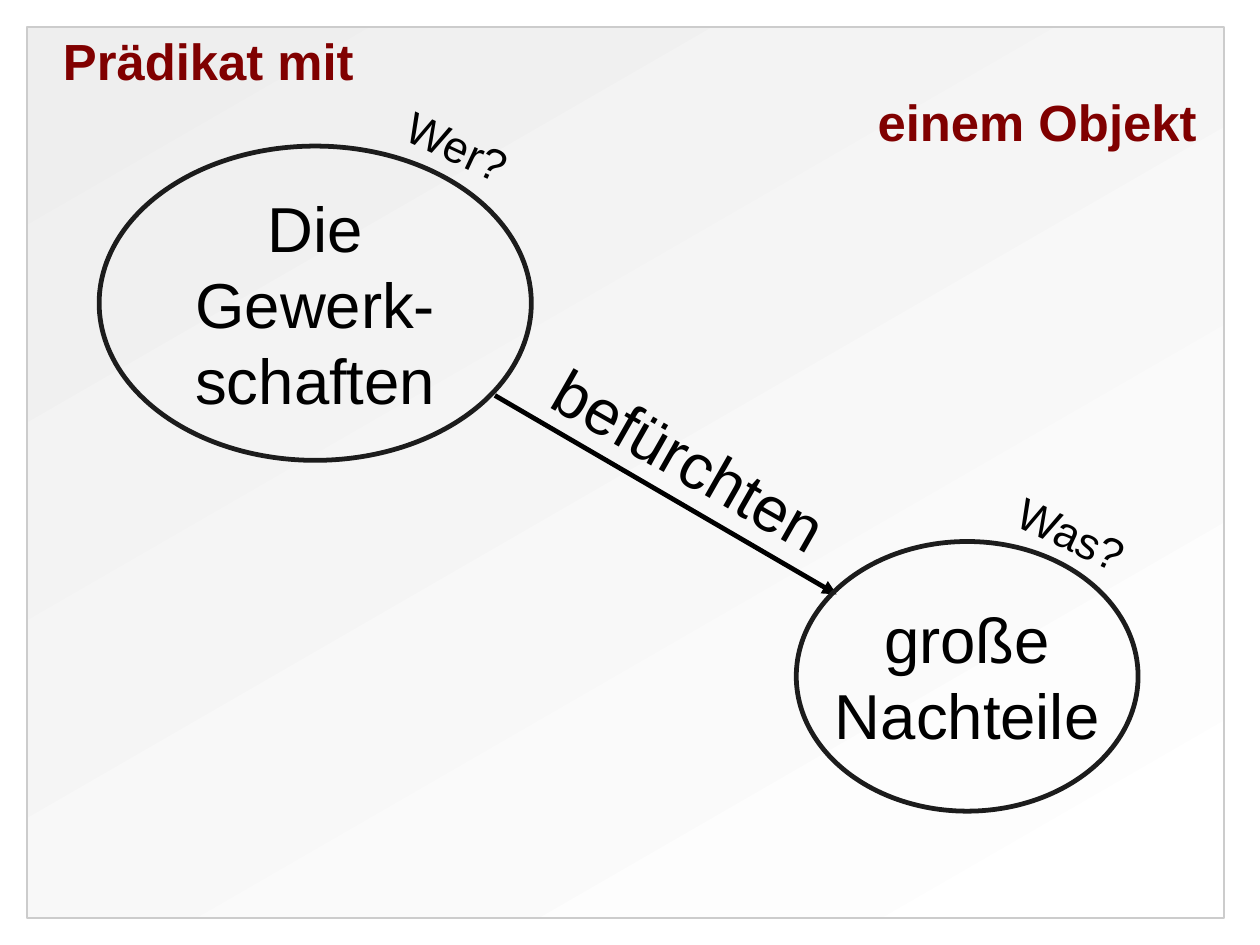
from lxml.etree import SubElement
from pptx import Presentation
from pptx.dml.color import RGBColor
from pptx.enum.shapes import MSO_CONNECTOR, MSO_SHAPE
from pptx.enum.text import MSO_ANCHOR, MSO_AUTO_SIZE, PP_ALIGN
from pptx.oxml.ns import qn
from pptx.util import Cm, Inches, Pt

WIDE, HIGH = Cm(28), Cm(21)
BLACK = RGBColor(0, 0, 0)
RING = RGBColor(0x1C, 0x1C, 0x1C)
EDGE = RGBColor(0xCC, 0xCC, 0xCC)
PALE = RGBColor(0xEE, 0xEE, 0xEE)
WHITE = RGBColor(0xFF, 0xFF, 0xFF)
MAROON = RGBColor(0x80, 0, 0)


def place(x, y, w, h):
    """Turn percent shares of the slide into a left, top, width, height list."""
    return [round(part * side / 100)
            for part, side in zip((x, y, w, h), (WIDE, HIGH) * 2)]


def write(frame, paras, size, color=BLACK, bold=False):
    """Fill a frame with (text, alignment) paragraphs, run by run."""
    for index, (text, align) in enumerate(paras):
        para = frame.paragraphs[0] if index == 0 else frame.add_paragraph()
        para.alignment = align
        para.line_spacing = 1
        para.space_before = Pt(0)
        for row, line in enumerate(text.split("\n")):
            if row:
                para.add_line_break()
            run = para.add_run()
            run.text = line
            font = run.font
            font.name, font.size, font.bold = "Arial", Pt(size), bold
            font.color.rgb = color


def inset(frame, side, top):
    """Set the margins of a frame in inches."""
    frame.margin_left = frame.margin_right = Inches(side)
    frame.margin_top = frame.margin_bottom = Inches(top)


def panel(slide, area):
    """Draw the shaded panel behind the title."""
    shape = slide.shapes.add_shape(MSO_SHAPE.RECTANGLE, *area)
    shape.shadow.inherit = False
    shape.fill.gradient()
    shape.fill.gradient_angle = 300
    for stop, color, at in zip(shape.fill.gradient_stops, (PALE, WHITE), (0, 1)):
        stop.color.rgb = color
        stop.position = at
    shape.line.color.rgb = EDGE
    shape.line.width = Pt(1.5)
    slide.shapes.title.element.addprevious(shape.element)


def head(slide, area, left, right):
    """Set the title with its first line left and its second line right."""
    title = slide.shapes.title
    title.left, title.top, title.width, title.height = area
    frame = title.text_frame
    frame.auto_size = MSO_AUTO_SIZE.NONE
    frame.vertical_anchor = MSO_ANCHOR.MIDDLE
    inset(frame, 0, 0)
    write(frame, [(left, PP_ALIGN.LEFT), (right, PP_ALIGN.RIGHT)], 32, MAROON, True)


def bubble(slide, area, *texts):
    """Draw an open ellipse with centred paragraphs."""
    shape = slide.shapes.add_shape(MSO_SHAPE.OVAL, *area)
    shape.shadow.inherit = False
    shape.fill.background()
    shape.line.color.rgb = RING
    shape.line.width = Pt(3)
    frame = shape.text_frame
    frame.word_wrap = False
    frame.vertical_anchor = MSO_ANCHOR.MIDDLE
    inset(frame, 0.12, 0.07)
    write(frame, [(text, PP_ALIGN.CENTER) for text in texts], 40)


def label(slide, area, text, size, turn, wrap=True):
    """Add a turned text label."""
    box = slide.shapes.add_textbox(*area)
    box.rotation = turn
    frame = box.text_frame
    frame.word_wrap = wrap
    if not wrap:
        frame.auto_size = MSO_AUTO_SIZE.SHAPE_TO_FIT_TEXT
    write(frame, [(text, PP_ALIGN.LEFT)], size)


def arrow(slide, ends):
    """Draw an arrow between two points."""
    link = slide.shapes.add_connector(MSO_CONNECTOR.STRAIGHT, *ends)
    link.line.color.rgb = BLACK
    link.line.width = Pt(3)
    props = link.element.spPr
    SubElement(props.find(qn("a:ln")), qn("a:tailEnd"), type="triangle")
    SubElement(props, qn("a:effectLst"))


def main():
    """Build the slide and save it."""
    deck = Presentation()
    deck.slide_width, deck.slide_height = WIDE, HIGH
    slide = deck.slides.add_slide(deck.slide_layouts[5])
    panel(slide, place(2.14, 2.86, 95, 94.3))
    head(slide, place(5, 3.5, 90, 12.1), "Prädikat mit", "einem Objekt")
    arrow(slide, place(39.28, 41.85, 66.4, 62.9))
    bubble(slide, place(7.87, 15.46, 34.3, 33.25), "Die", "Gewerk-\nschaften")
    label(slide, place(31.2, 12.45, 11.8, 6.77), "Wer?", 28, 25)
    bubble(slide, place(63.2, 57.3, 27.13, 28.54), "große", "Nachteile")
    label(slide, place(79.74, 53.57, 12.52, 6.41), "Was?", 28, 25)
    label(slide, place(42, 44, 25.86, 9.31), "befürchten", 40, 29.7, False)
    deck.save("out.pptx")


if __name__ == "__main__":
    main()
